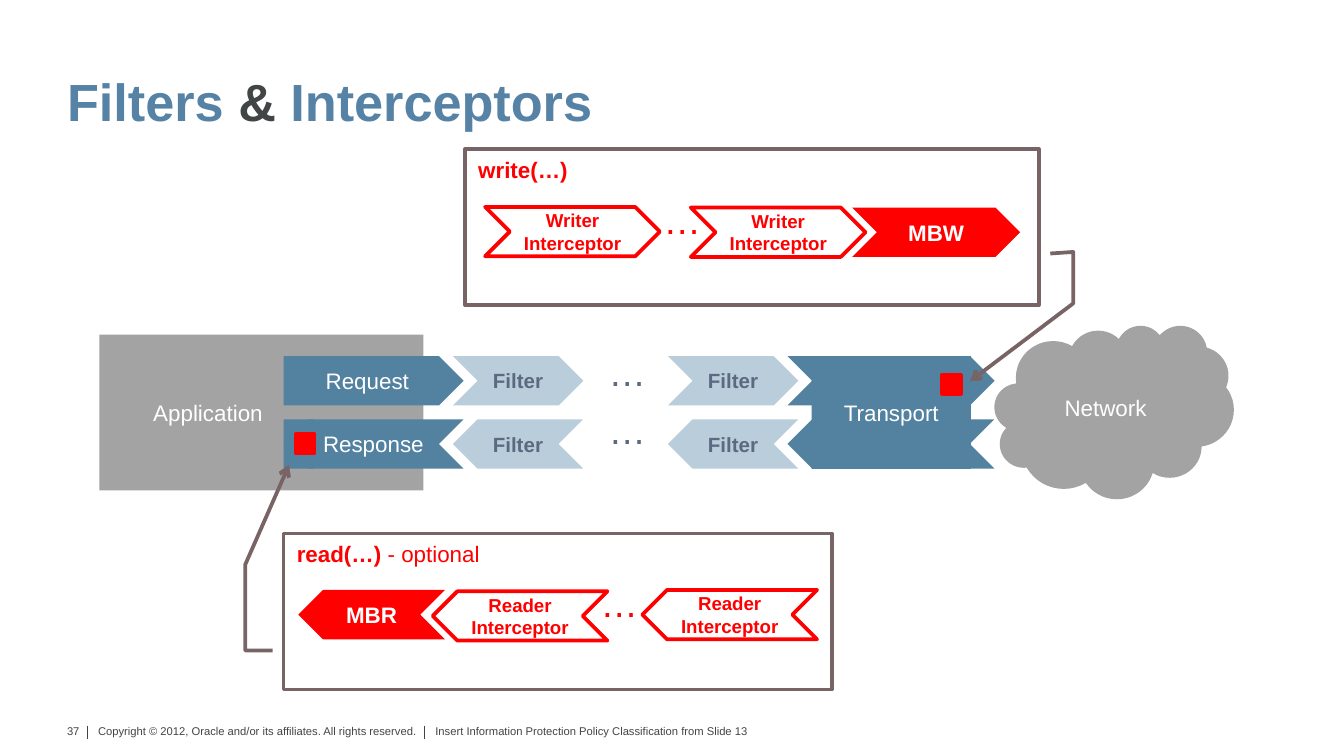
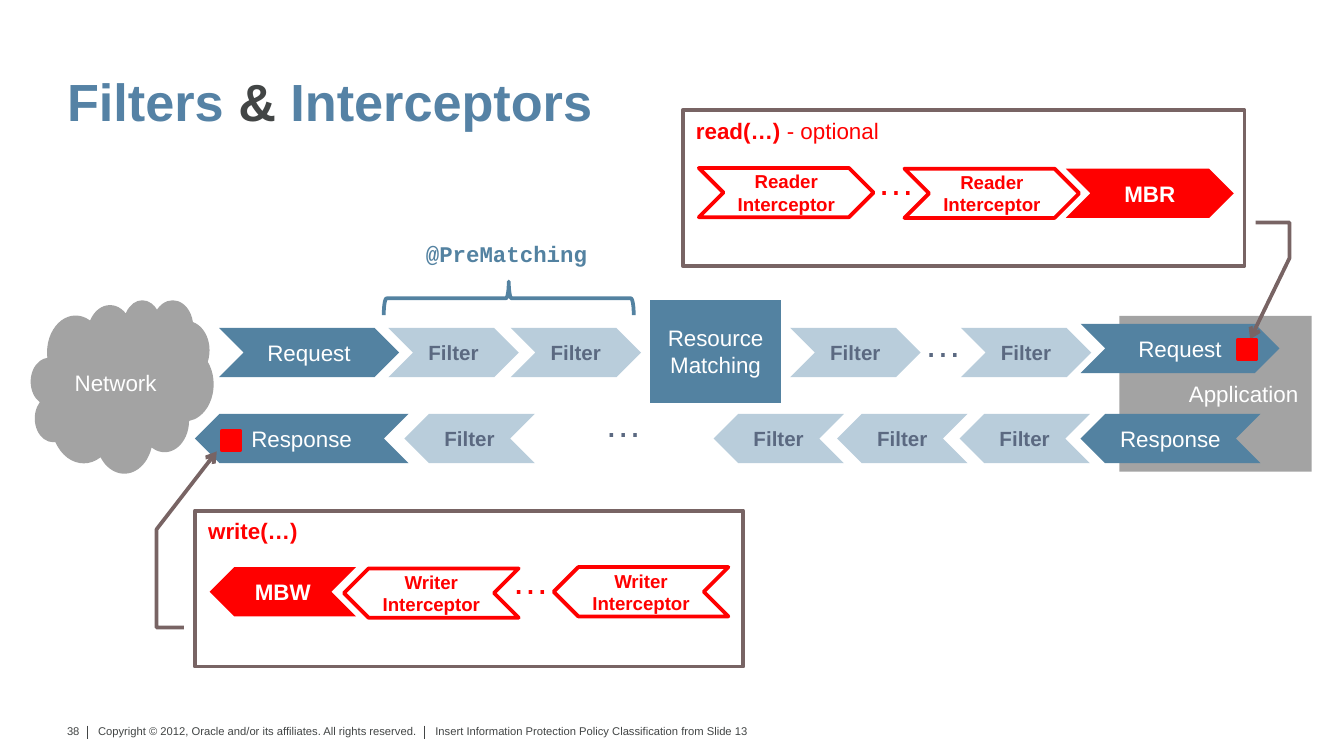
from lxml import etree
from pptx import Presentation
from pptx.dml.color import RGBColor
from pptx.enum.shapes import MSO_CONNECTOR, MSO_SHAPE
from pptx.enum.text import MSO_ANCHOR, MSO_AUTO_SIZE, PP_ALIGN
from pptx.oxml.ns import qn
from pptx.util import Inches, Pt

WIDTH = Inches(10)
HEIGHT = WIDTH * 9 // 16
COLUMNS, ROWS = 100, 56.25

WHITE = RGBColor(0xFF, 0xFF, 0xFF)
RED = RGBColor(0xFF, 0x00, 0x00)
BLUE = RGBColor(0x53, 0x82, 0xA1)
TITLE_BLUE = RGBColor(0x55, 0x82, 0xA5)
PALE_BLUE = RGBColor(0xB9, 0xCD, 0xDB)
SLATE = RGBColor(0x5B, 0x69, 0x81)
GRAY = RGBColor(0xA3, 0xA3, 0xA3)
CHARCOAL = RGBColor(0x42, 0x45, 0x45)
BROWN = RGBColor(0x78, 0x64, 0x64)

SANS, MONO = "Arial", "Courier New"
LEFT, CENTER, RIGHT = PP_ALIGN.LEFT, PP_ALIGN.CENTER, PP_ALIGN.RIGHT
TOP, MIDDLE, BOTTOM = MSO_ANCHOR.TOP, MSO_ANCHOR.MIDDLE, MSO_ANCHOR.BOTTOM
GROW = MSO_AUTO_SIZE.SHAPE_TO_FIT_TEXT
STRAIGHT = MSO_CONNECTOR.STRAIGHT
RECTANGLE, CLOUD = MSO_SHAPE.RECTANGLE, MSO_SHAPE.CLOUD
CHEVRON, PENTAGON = MSO_SHAPE.CHEVRON, MSO_SHAPE.PENTAGON
PROCESS, BRACE = MSO_SHAPE.FLOWCHART_PROCESS, MSO_SHAPE.LEFT_BRACE
BENT_CALLOUT = MSO_SHAPE.LINE_CALLOUT_3

ARROW_HEIGHT = 3.67
FILTER_WIDTH = 9.7
INTERCEPTOR_WIDTH = 13
CALLOUT_HEIGHT = 11.6
COPYRIGHT = "Copyright © 2012, Oracle and/or its affiliates. All rights reserved."
CLASSIFICATION = "Insert Information Protection Policy Classification from Slide 13"


def across(columns):
    return round(WIDTH * columns / COLUMNS)


def down(rows):
    return round(HEIGHT * rows / ROWS)


def cell(left, top, width, height):
    return across(left), down(top), across(width), down(height)


def format_run(run, size, color, bold=False, font=SANS):
    run.font.size = Pt(size)
    run.font.name = font
    run.font.bold = bold
    run.font.color.rgb = color


def append_run(paragraph, text, *style):
    run = paragraph.add_run()
    run.text = text
    format_run(run, *style)


def write(shape, text, style, align=CENTER, anchor=MIDDLE):
    """Fill the shape with one paragraph per line; return the first."""
    frame = shape.text_frame
    frame.text = text
    frame.word_wrap = True
    frame.vertical_anchor = anchor
    for paragraph in frame.paragraphs:
        paragraph.alignment = align
        for run in paragraph.runs:
            format_run(run, *style)
    return frame.paragraphs[0]


def set_insets(shape, horizontal, vertical):
    frame = shape.text_frame
    frame.margin_left = frame.margin_right = Inches(horizontal)
    frame.margin_top = frame.margin_bottom = Inches(vertical)


class Deck:
    label = (12, WHITE)
    strong_label = (12, WHITE, True)
    filter_label = (11, SLATE, True)
    interceptor_label = (10, RED, True)
    footer_label = (6, CHARCOAL)

    def __init__(self, presentation):
        self.presentation = presentation
        self.slide = None

    def start_slide(self, number):
        self.slide = self.presentation.slides.add_slide(self.presentation.slide_layouts[6])
        self.footer(number)
        self.title()

    def title(self):
        box = self.slide.shapes.add_textbox(*cell(5, 5.3, 90, 4.6))
        set_insets(box, 0, 0)
        paragraph = write(box, "Filters ", (28, TITLE_BLUE, True), LEFT, BOTTOM)
        paragraph.line_spacing = 0.9
        append_run(paragraph, "& ", 28, CHARCOAL, True)
        append_run(paragraph, "Interceptors", 28, TITLE_BLUE, True)

    def footer(self, number):
        for text, left, width in ((COPYRIGHT, 6.9, 27.4), (CLASSIFICATION, 32, 24.7)):
            box = self.slide.shapes.add_textbox(*cell(left, 53.7, width, 2.4))
            set_insets(box, 0.04, 0.02)
            write(box, text, self.footer_label, LEFT, TOP)
            self.divider(left - 0.38)
        self.free_text(str(number), (3.9, 53.4, 3, 2), self.footer_label, RIGHT)

    def divider(self, left):
        line = self.slide.shapes.add_connector(
            STRAIGHT, across(left), down(54), across(left), down(55))
        line.line.color.rgb = CHARCOAL
        line.line.width = Pt(0.5)
        etree.SubElement(line._element.spPr, qn("a:effectLst"))

    def free_text(self, text, place, style, align=LEFT):
        """Add text that does not wrap."""
        box = self.slide.shapes.add_textbox(*cell(*place))
        write(box, text, style, align, TOP)
        box.text_frame.word_wrap = False
        box.text_frame.auto_size = GROW

    def ellipsis(self, left, top, color=SLATE):
        self.free_text("…", (left, top, 4.8, 4.4), (20, color))

    def block(self, kind, place, fill=None, line=None, text="", style=label, align=CENTER):
        shape = self.slide.shapes.add_shape(kind, *cell(*place))
        shape.shadow.inherit = False
        if fill is None:
            shape.fill.background()
        else:
            shape.fill.solid()
            shape.fill.fore_color.rgb = fill
        if line is None:
            shape.line.fill.background()
        else:
            shape.line.color.rgb = line
            shape.line.width = Pt(2)
        if text:
            write(shape, text, style, align)
        return shape

    def arrow(self, left, top, width, text="", forward=True, fill=BLUE, line=None,
              style=label, kind=CHEVRON):
        place = (left, top, width, ARROW_HEIGHT)
        shape = self.block(kind, place, fill, line, text, style)
        set_insets(shape, 0, 0.05)
        if not forward:
            shape._element.spPr.find(qn("a:xfrm")).set("flipH", "1")

    def filters(self, top, lefts, forward=True):
        for left in lefts:
            self.arrow(left, top, FILTER_WIDTH, "Filter", forward, PALE_BLUE,
                       style=self.filter_label)

    def marker(self, left, top):
        self.block(RECTANGLE, (left, top, 1.4, 1.4), RED, RED)

    def callout(self, left, top, width, bends, heading, note=""):
        """Add a box whose bent pointer runs through (row, column) shares of the box."""
        place = (left, top, width, CALLOUT_HEIGHT)
        shape = self.block(BENT_CALLOUT, place, WHITE, BROWN)
        for index, share in enumerate(bends):
            shape.adjustments[index] = share
        etree.SubElement(shape.line._get_or_add_ln(), qn("a:tailEnd"), type="arrow")
        paragraph = write(shape, heading, (12, RED, True), LEFT, TOP)
        if note:
            append_run(paragraph, note, 12, RED)

    def interceptor(self, left, top, role, forward):
        self.arrow(left, top, INTERCEPTOR_WIDTH, f"{role}\nInterceptor", forward,
                   WHITE, RED, self.interceptor_label)

    def forward_chain(self, left, top, role, body):
        self.interceptor(left, top, role, True)
        self.ellipsis(left + 12.3, top - 1.2, RED)
        self.arrow(left + 27.3, top + 0.05, 12.5, body, fill=RED, style=self.strong_label)
        self.interceptor(left + 15.3, top + 0.05, role, True)

    def backward_chain(self, left, top, role, body):
        self.ellipsis(left + 21.5, top - 1.25, RED)
        self.arrow(left, top, 10.9, body, False, RED, style=self.strong_label)
        self.interceptor(left + 10, top + 0.1, role, False)
        self.interceptor(left + 25.6, top, role, False)


def build_client_slide(deck):
    deck.start_slide(37)
    request_top, response_top = 26.5, 31.2
    application = deck.block(RECTANGLE, (7.4, 24.9, 24.1, 11.6), GRAY,
                             text="Application", align=LEFT)
    application.text_frame.margin_left = Inches(0.4)
    deck.arrow(21.1, request_top, 13.4, "Request", kind=PENTAGON)
    deck.block(CLOUD, (74, 24.2, 17.8, 12.9), GRAY, text="Network")

    deck.arrow(58.6, request_top, 15.4)
    deck.arrow(58.6, response_top, 15.4, forward=False)
    deck.block(RECTANGLE, (60.4, request_top, 11.85, 8.4), BLUE, text="Transport")

    deck.arrow(21.1, response_top, 13.4, "Response", False)
    deck.block(RECTANGLE, (21.1, response_top, 2.3, ARROW_HEIGHT), BLUE)
    for top, ellipsis_top, forward in ((request_top, 25.5, True),
                                       (response_top, 29.8, False)):
        deck.filters(top, (33.7, 49.7), forward)
        deck.ellipsis(44.3, ellipsis_top)

    deck.callout(34.6, 11.1, 42.7,
                 (0.67, 1.02, 0.66, 1.06, 0.99, 1.06, 1.49, 0.88), "write(…)")
    deck.forward_chain(36.1, 15.4, "Writer", "MBW")
    deck.callout(21.1, 39.7, 40.8,
                 (0.75, -0.02, 0.75, -0.07, 0.2, -0.07, -0.44, 0.01),
                 "read(…)", " - optional")
    deck.backward_chain(22.2, 43.9, "Reader", "MBR")
    deck.marker(70.1, 27.9)
    deck.marker(22, 32.3)


def build_server_slide(deck):
    deck.start_slide(38)
    request_top, response_top = 24.4, 30.8
    deck.arrow(14.5, response_top, 15.9, "Response", False)
    deck.block(RECTANGLE, (83.3, 23.5, 14.3, 11.6), GRAY, text="Application", align=RIGHT)
    deck.block(CLOUD, (2.3, 22.3, 13.6, 12.9), GRAY, text="Network")

    deck.filters(request_top, (28.9, 38, 58.8, 71.5))
    deck.ellipsis(67.8, 23.3)
    deck.arrow(80.4, 24.1, 14.8, "Request")
    deck.arrow(16.3, request_top, 13.4, "Request")

    deck.arrow(80.4, response_top, 13.4, "Response", False)
    deck.filters(response_top, (30.1, 53.1, 62.3, 71.4), False)
    deck.ellipsis(44, 29.3)

    deck.callout(14.5, 38, 40.8,
                 (0.75, -0.02, 0.75, -0.07, 0.12, -0.07, -0.38, 0.04), "write(…)")
    deck.backward_chain(15.6, 42.2, "Writer", "MBW")
    deck.callout(50.8, 8.2, 41.8,
                 (0.72, 1.02, 0.72, 1.08, 0.95, 1.08, 1.47, 1.01),
                 "read(…) ", "- optional")
    deck.forward_chain(52, 12.5, "Reader", "MBR")

    deck.block(PROCESS, (48.4, 22.3, 9.7, 7.7), BLUE, text="Resource Matching")
    brace = deck.block(BRACE, (36.6, 12.9, 2.5, 18.6), line=BLUE)
    brace.rotation = 90
    deck.free_text("@PreMatching", (30.7, 17.4, 14.1, 3), (12, BLUE, True, MONO))
    deck.marker(16.5, 32.1)
    deck.marker(92.1, 25.3)


def main():
    presentation = Presentation()
    presentation.slide_width = WIDTH
    presentation.slide_height = HEIGHT
    deck = Deck(presentation)
    build_client_slide(deck)
    build_server_slide(deck)
    presentation.save("out.pptx")


if __name__ == "__main__":
    main()
